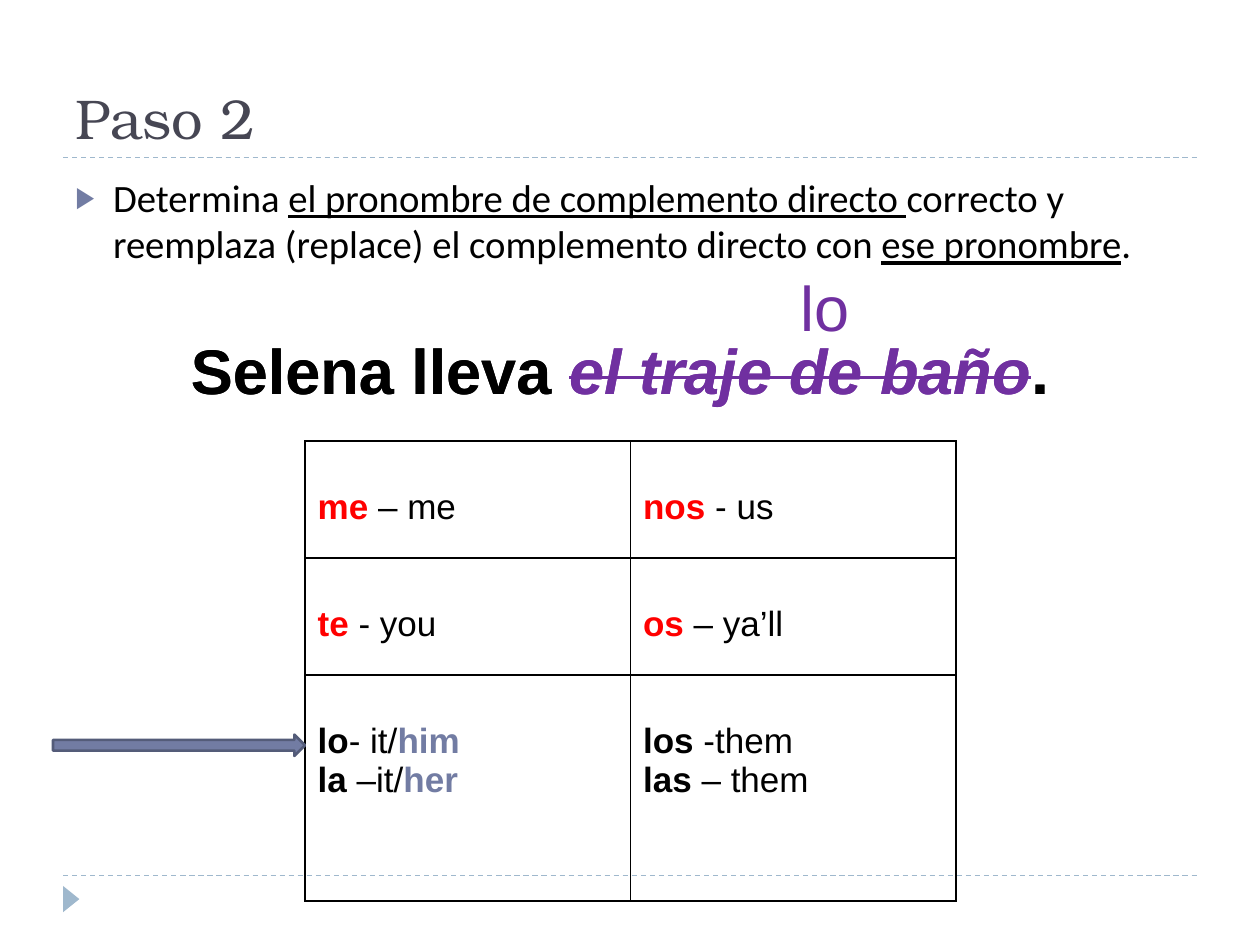
from lxml import etree
from pptx import Presentation
from pptx.dml.color import RGBColor
from pptx.enum import dml, shapes, text
from pptx.oxml.ns import qn
from pptx.util import Cm, Pt

BLACK, RED, BLUE, PURPLE, PALE = "000000", "FF0000", "727CA3", "7030A0", "9FB8CD"

# Each run: words, colour, style letters (b bold, i italic, u underline, s strike)
TITLE = [("Paso 2", "464653", "")]
TASK = [
    ("Determina ", BLACK, ""),
    ("el pronombre de complemento directo ", BLACK, "u"),
    ("correcto y reemplaza (replace) el complemento directo con ", BLACK, ""),
    ("ese pronombre", BLACK, "u"),
    (".", BLACK, ""),
]
ANSWER = [("lo", PURPLE, "")]
# Plain sentence, then the struck one over it: box width, object style
STEPS = [(21.17, "bi"), (18.63, "bis")]

# Rows of cells, cells of lines, lines of runs
PRONOUNS = [
    [[[("me", RED, "b"), (" – me", BLACK, "")]],
     [[("nos ", RED, "b"), ("- us", BLACK, "")]]],
    [[[("te", RED, "b"), (" - you", BLACK, "")]],
     [[("os", RED, "b"), (" – ya’ll", BLACK, "")]]],
    [[[("lo", BLACK, "b"), ("- it/", BLACK, ""), ("him", BLUE, "b")],
      [("la", BLACK, "b"), (" –it/", BLACK, ""), ("her", BLUE, "b")]],
     [[("los", BLACK, "b"), (" -them", BLACK, "")],
      [("las", BLACK, "b"), (" – them", BLACK, "")]]],
]
HEIGHTS = [2.36, 2.36, 4.55]
COL = 6.56


def rgb(code):
    return RGBColor.from_string(code)


def write(para, runs, size, face):
    para.alignment = text.PP_ALIGN.LEFT
    for words, hue, style in runs:
        run = para.add_run()
        run.text = words
        font = run.font
        font.size, font.name = Pt(size), face
        font.color.rgb = rgb(hue)
        font.bold, font.italic = "b" in style, "i" in style
        font.underline = "u" in style
        if "s" in style:
            run._r.get_or_add_rPr().set("strike", "sngStrike")


def add_text(slide, box, runs, size, face):
    frame = slide.shapes.add_textbox(*map(Cm, box)).text_frame
    frame.word_wrap = True
    para = frame.paragraphs[0]
    write(para, runs, size, face)
    return para


def add_bullet(para):
    props = para._p.get_or_add_pPr()
    props.set("marL", str(Cm(0.76)))
    props.set("indent", str(-Cm(0.76)))
    hue = etree.SubElement(props, qn("a:buClr"))
    etree.SubElement(hue, qn("a:srgbClr"), val=BLUE)
    etree.SubElement(props, qn("a:buSzPct"), val="76000")
    etree.SubElement(props, qn("a:buFont"), typeface="Arial")
    etree.SubElement(props, qn("a:buChar"), char="▶")


def add_rule(slide, y):
    line = slide.shapes.add_connector(
        shapes.MSO_CONNECTOR.STRAIGHT, Cm(1.27), Cm(y), Cm(24.13), Cm(y))
    line.line.color.rgb = rgb(PALE)
    line.line.width = Pt(0.75)
    line.line.dash_style = dml.MSO_LINE.DASH
    etree.SubElement(line._element.spPr, qn("a:effectLst"))


def add_shape(slide, kind, box, fill):
    shape = slide.shapes.add_shape(kind, *map(Cm, box))
    shape.shadow.inherit = False
    shape.fill.solid()
    shape.fill.fore_color.rgb = rgb(fill)
    shape.line.fill.background()
    return shape


def add_border(cell):
    props = cell._tc.get_or_add_tcPr()
    for at, side in enumerate(("lnL", "lnR", "lnT", "lnB")):
        line = etree.Element(qn("a:" + side), w=str(Pt(1)))
        fill = etree.SubElement(line, qn("a:solidFill"))
        etree.SubElement(fill, qn("a:srgbClr"), val=BLACK)
        props.insert(at, line)


def add_grid(slide):
    grid = slide.shapes.add_table(
        len(PRONOUNS), 2, Cm(6.15), Cm(8.89), Cm(2 * COL), Cm(sum(HEIGHTS))).table
    grid.first_row = grid.horz_banding = False
    for col in grid.columns:
        col.width = Cm(COL)
    for r, row in enumerate(PRONOUNS):
        grid.rows[r].height = Cm(HEIGHTS[r])
        for c, lines in enumerate(row):
            cell = grid.cell(r, c)
            cell.margin_top = Cm(0.94)
            cell.fill.background()
            add_border(cell)
            frame = cell.text_frame
            for n, runs in enumerate(lines):
                para = frame.add_paragraph() if n else frame.paragraphs[0]
                write(para, runs, 20, "Arial")


def main():
    deck = Presentation()
    deck.slide_width, deck.slide_height = Cm(25.4), Cm(19.05)
    slide = deck.slides.add_slide(deck.slide_layouts[5])

    for y in (17.65, 3.18):
        add_rule(slide, y)
    mark = add_shape(slide, shapes.MSO_SHAPE.ISOSCELES_TRIANGLE,
                     (1.17, 17.96, 0.53, 0.33), PALE)
    mark.rotation = 90

    title = slide.shapes.title
    title.left, title.top, title.width, title.height = map(Cm, (1.27, 0.43, 22.86, 2.74))
    title.text_frame.vertical_anchor = text.MSO_ANCHOR.BOTTOM
    write(title.text_frame.paragraphs[0], TITLE, 32, "TeX Gyre Bonum")

    task = add_text(slide, (1.27, 3.38, 22.86, 2.11), TASK, 22.1, "Calibri")
    task.space_before = Pt(6)
    add_bullet(task)

    add_grid(slide)
    arrow = add_shape(slide, shapes.MSO_SHAPE.RIGHT_ARROW, (1.07, 14.81, 5.08, 0.43), BLUE)
    arrow.line.color.rgb = rgb("545C79")
    arrow.line.width = Pt(1.5)

    for width, style in STEPS:
        runs = [("Selena lleva ", BLACK, "b"), ("el traje de baño", PURPLE, style),
                (".", BLACK, "b")]
        add_text(slide, (3.6, 6.55, width, 1.8), runs, 36, "Arial")
    add_text(slide, (15.88, 5.28, 1.7, 1.8), ANSWER, 36, "Arial")

    deck.save("out.pptx")


if __name__ == "__main__":
    main()
